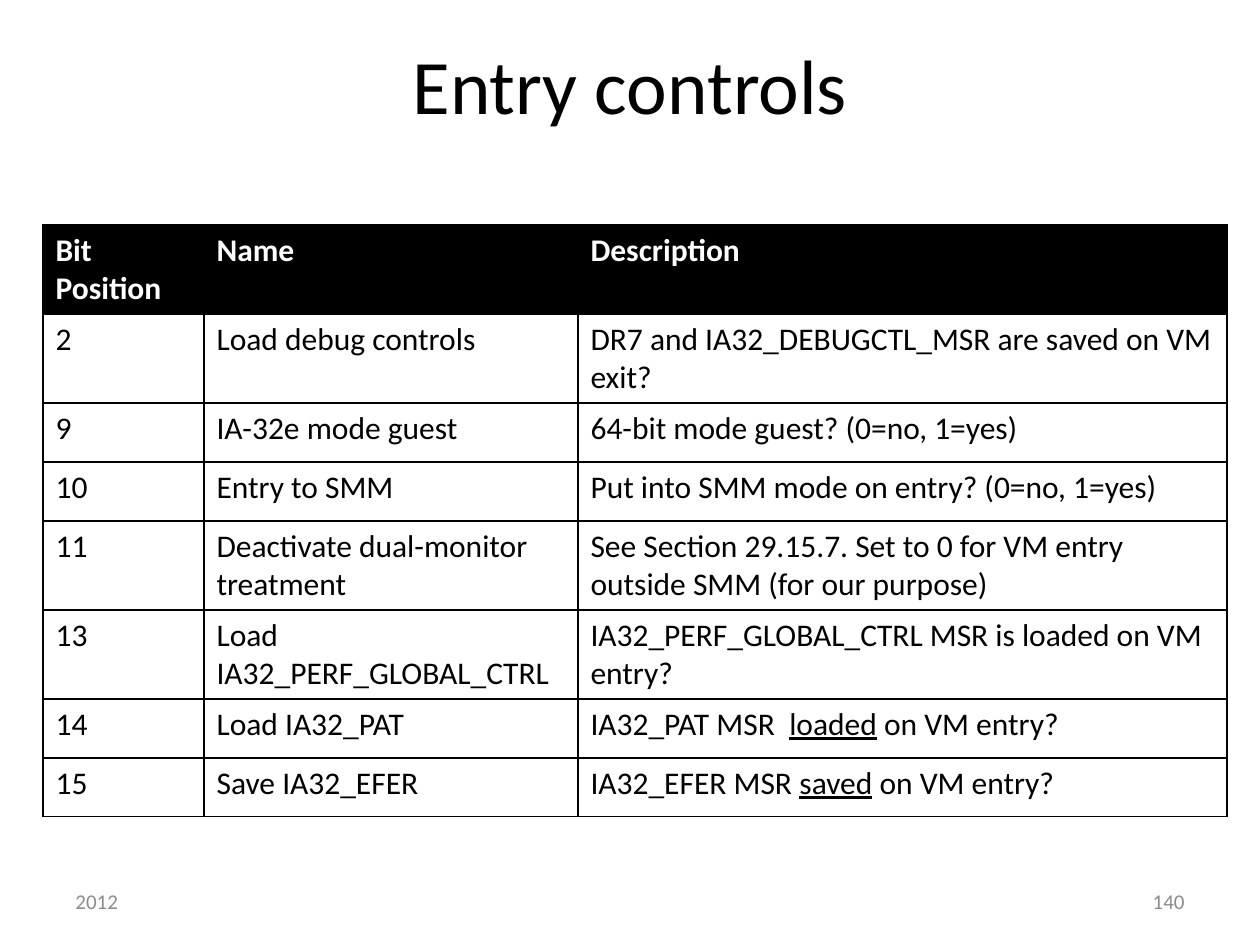
from dataclasses import dataclass

from lxml import etree
from pptx import Presentation
from pptx.dml.color import RGBColor
from pptx.enum.text import MSO_ANCHOR, PP_ALIGN
from pptx.oxml.ns import qn
from pptx.util import Pt

MIDDLE = MSO_ANCHOR.MIDDLE
LEFT, CENTER, RIGHT = PP_ALIGN.LEFT, PP_ALIGN.CENTER, PP_ALIGN.RIGHT
EMU_PER_PX = 914400 / 126
TITLE_ONLY = 5

COLUMN_WIDTHS = (161, 374, 649)
SHORT_ROW, TALL_ROW = 59, 89
HEADER = ("Bit Position", "Name", ("Description",))
CONTROLS = (
    ("2", "Load debug controls", ("DR7 and IA32_DEBUGCTL_MSR are saved on VM exit?",)),
    ("9", "IA-32e mode guest", ("64-bit mode guest? (0=no, 1=yes)",)),
    ("10", "Entry to SMM", ("Put into SMM mode on entry? (0=no, 1=yes)",)),
    ("11", "Deactivate dual-monitor treatment",
     ("See Section 29.15.7. Set to 0 for VM entry outside SMM (for our purpose)",)),
    ("13", "Load IA32_PERF_GLOBAL_CTRL",
     ("IA32_PERF_GLOBAL_CTRL MSR is loaded on VM entry?",)),
    ("14", "Load IA32_PAT", ("IA32_PAT MSR  ", "loaded", " on VM entry?")),
    ("15", "Save IA32_EFER", ("IA32_EFER MSR ", "saved", " on VM entry?")),
)
TALL_BITS = {"Bit Position", "2", "11", "13"}


@dataclass(frozen=True)
class Theme:
    """Colours, font, type sizes and line widths of the slide."""
    font: str = "Calibri"
    ink: str = "000000"
    paper: str = "FFFFFF"
    muted: str = "8C8C8C"
    title_size: int = 44
    table_size: int = 18
    footer_size: int = 12
    thin_line: float = 0.75
    inner_line: float = 1


def px(length):
    """Turn pixels into EMU."""
    return round(length * EMU_PER_PX)


class SlideBuilder:
    """Holds the theme and the current slide and adds elements to it."""

    def __init__(self, slide, theme):
        """Keep the slide and its theme."""
        self.slide = slide
        self.theme = theme

    def add_run(self, paragraph, text, size, color, bold=False, underline=False):
        """Append one formatted run."""
        run = paragraph.add_run()
        run.text = text
        run.font.name = self.theme.font
        run.font.size = Pt(size)
        run.font.bold = bold
        run.font.underline = underline
        run.font.color.rgb = RGBColor.from_string(color)

    def add_title(self, text, left, top, width, height):
        """Place and fill the title placeholder."""
        title = self.slide.shapes.title
        title.left, title.top, title.width, title.height = map(px, (left, top, width, height))
        title.text_frame.vertical_anchor = MIDDLE
        paragraph = title.text_frame.paragraphs[0]
        paragraph.alignment = CENTER
        self.add_run(paragraph, text, self.theme.title_size, self.theme.ink)

    def add_footer(self, text, left, top, width, height, alignment):
        """Add a small muted text at the foot of the slide."""
        box = self.slide.shapes.add_textbox(*map(px, (left, top, width, height)))
        box.text_frame.word_wrap = True
        box.text_frame.vertical_anchor = MIDDLE
        paragraph = box.text_frame.paragraphs[0]
        paragraph.alignment = alignment
        self.add_run(paragraph, text, self.theme.footer_size, self.theme.muted)

    def add_border(self, cell, side, width):
        """Draw one solid border of a cell."""
        properties = cell._tc.get_or_add_tcPr()
        line = etree.SubElement(properties, qn(f"a:ln{side}"), w=str(Pt(width)))
        fill = etree.SubElement(line, qn("a:solidFill"))
        etree.SubElement(fill, qn("a:srgbClr"), val=self.theme.ink)

    def fill_cell(self, cell, pieces, is_header):
        """Colour a cell and write its runs, underlining every second one."""
        theme = self.theme
        background, color = (theme.ink, theme.paper) if is_header else (theme.paper, theme.ink)
        cell.fill.solid()
        cell.fill.fore_color.rgb = RGBColor.from_string(background)
        paragraph = cell.text_frame.paragraphs[0]
        for index, piece in enumerate(pieces):
            self.add_run(paragraph, piece, theme.table_size, color, is_header, index % 2 == 1)

    def add_table(self, rows, left, top):
        """Add the bordered table with its header row."""
        theme = self.theme
        heights = [TALL_ROW if row[0] in TALL_BITS else SHORT_ROW for row in rows]
        frame = self.slide.shapes.add_table(
            len(rows), len(COLUMN_WIDTHS),
            *map(px, (left, top, sum(COLUMN_WIDTHS), sum(heights))))
        table = frame.table
        table.horz_banding = False
        for column, width in zip(table.columns, COLUMN_WIDTHS):
            column.width = px(width)
        last = len(COLUMN_WIDTHS) - 1
        for row_index, (bit, name, description) in enumerate(rows):
            table.rows[row_index].height = px(heights[row_index])
            for column_index, pieces in enumerate(((bit,), (name,), description)):
                cell = table.cell(row_index, column_index)
                self.add_border(cell, "L", theme.inner_line if column_index else theme.thin_line)
                self.add_border(
                    cell, "R", theme.inner_line if column_index < last else theme.thin_line)
                self.add_border(cell, "T", theme.thin_line)
                self.add_border(cell, "B", theme.thin_line)
                self.fill_cell(cell, pieces, row_index == 0)


def main():
    """Build and save the presentation."""
    presentation = Presentation()
    presentation.slide_width, presentation.slide_height = px(1260), px(945)
    slide = presentation.slides.add_slide(presentation.slide_layouts[TITLE_ONLY])
    builder = SlideBuilder(slide, Theme())
    builder.add_title("Entry controls", 63, 5, 1134, 158)
    builder.add_footer("2012", 63, 876, 294, 50, LEFT)
    builder.add_footer("140", 903, 876, 294, 50, RIGHT)
    builder.add_table((HEADER, *CONTROLS), 43, 225)
    presentation.save("out.pptx")


if __name__ == "__main__":
    main()
